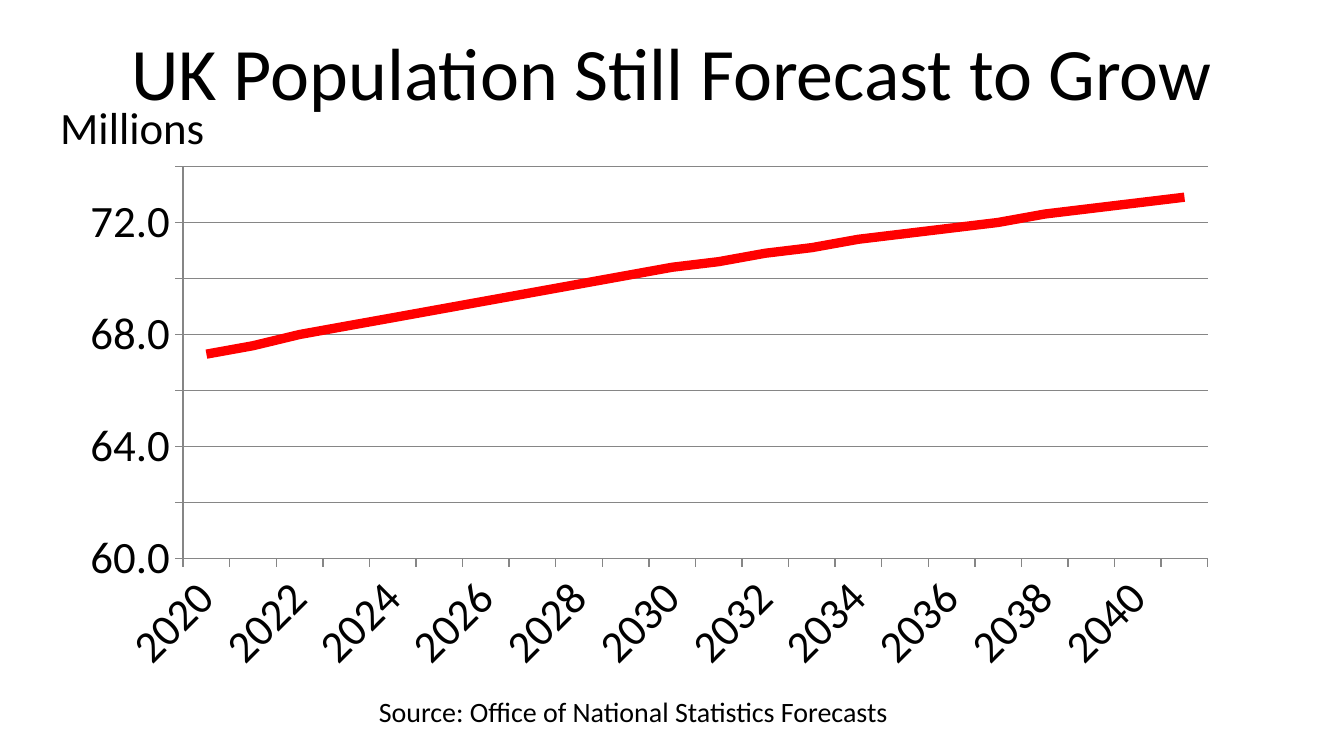
from dataclasses import dataclass

from pptx import Presentation
from pptx.chart.data import CategoryChartData
from pptx.dml.color import RGBColor
from pptx.enum.chart import XL_CHART_TYPE as Kind, XL_TICK_MARK as Tick
from pptx.enum.text import MSO_ANCHOR as Anchor, PP_ALIGN as Align
from pptx.util import Inches, Pt


@dataclass(frozen=True)
class Theme:
    font: str = "Calibri"
    ink: RGBColor = RGBColor(0, 0, 0)
    line: RGBColor = RGBColor(255, 0, 0)
    grid: RGBColor = RGBColor(0x86, 0x86, 0x86)
    title: float = 39.6
    body: float = 24
    note: float = 15


FIRST = 2020
PEOPLE = [67.3, 67.6, 68, 68.3, 68.6, 68.9, 69.2, 69.5, 69.8, 70.1, 70.4,
          70.6, 70.9, 71.1, 71.4, 71.6, 71.8, 72, 72.3, 72.5, 72.7, 72.9]


def write(frame, text, theme, size, align=Align.LEFT, anchor=Anchor.TOP):
    frame.word_wrap = True
    frame.vertical_anchor = anchor
    para = frame.paragraphs[0]
    para.alignment = align
    run = para.add_run()
    run.text = text
    style(run.font, theme, size)


def style(font, theme, size):
    font.name = theme.font
    font.size = Pt(size)
    font.color.rgb = theme.ink


class Deck:
    def __init__(self, theme):
        self.theme = theme
        self.prs = Presentation()
        self.prs.slide_width = Inches(10)
        self.prs.slide_height = Inches(10 * 9 / 16)
        self.slide = self.prs.slides.add_slide(self.prs.slide_layouts[6])

    def text(self, text, box, size, **form):
        shape = self.slide.shapes.add_textbox(*map(Inches, box))
        write(shape.text_frame, text, self.theme, size, **form)

    def chart(self, cats, vals, box):
        theme = self.theme
        data = CategoryChartData(number_format="0.0")
        data.categories = cats
        data.add_series("Series 1", vals)
        chart = self.slide.shapes.add_chart(
            Kind.LINE, *map(Inches, box), data).chart
        chart.has_legend = chart.has_title = False
        style(chart.font, theme, theme.body)
        plot = chart.plots[0]
        plot.vary_by_categories = False
        series = plot.series[0]
        series.smooth = False
        series.format.line.color.rgb = theme.line
        series.format.line.width = Pt(5)
        self.axes(chart)

    def axes(self, chart):
        years, count = chart.category_axis, chart.value_axis
        count.minimum_scale = 60
        count.has_major_gridlines = True
        labels = count.tick_labels
        labels.number_format = "0.0"
        labels.number_format_is_linked = False
        for axis in (years, count):
            axis.major_tick_mark = Tick.OUTSIDE
            axis.minor_tick_mark = Tick.NONE
        for part in (years, count, count.major_gridlines):
            part.format.line.color.rgb = self.theme.grid
            part.format.line.width = Pt(0.75)


def main():
    theme = Theme()
    deck = Deck(theme)
    deck.text("UK Population Still Forecast to Grow", (0.5, 0.06, 9, 0.94),
              theme.title, align=Align.CENTER, anchor=Anchor.MIDDLE)
    years = [str(FIRST + i) for i in range(len(PEOPLE))]
    deck.chart(years, PEOPLE, (0.5, 1.16, 8.66, 3.94))
    deck.text("Millions", (0.35, 0.69, 1.34, 0.5), theme.body)
    deck.text("Source: Office of National Statistics Forecasts",
              (2.72, 5.12, 7.28, 0.35), theme.note)
    deck.prs.save("out.pptx")


if __name__ == "__main__":
    main()
